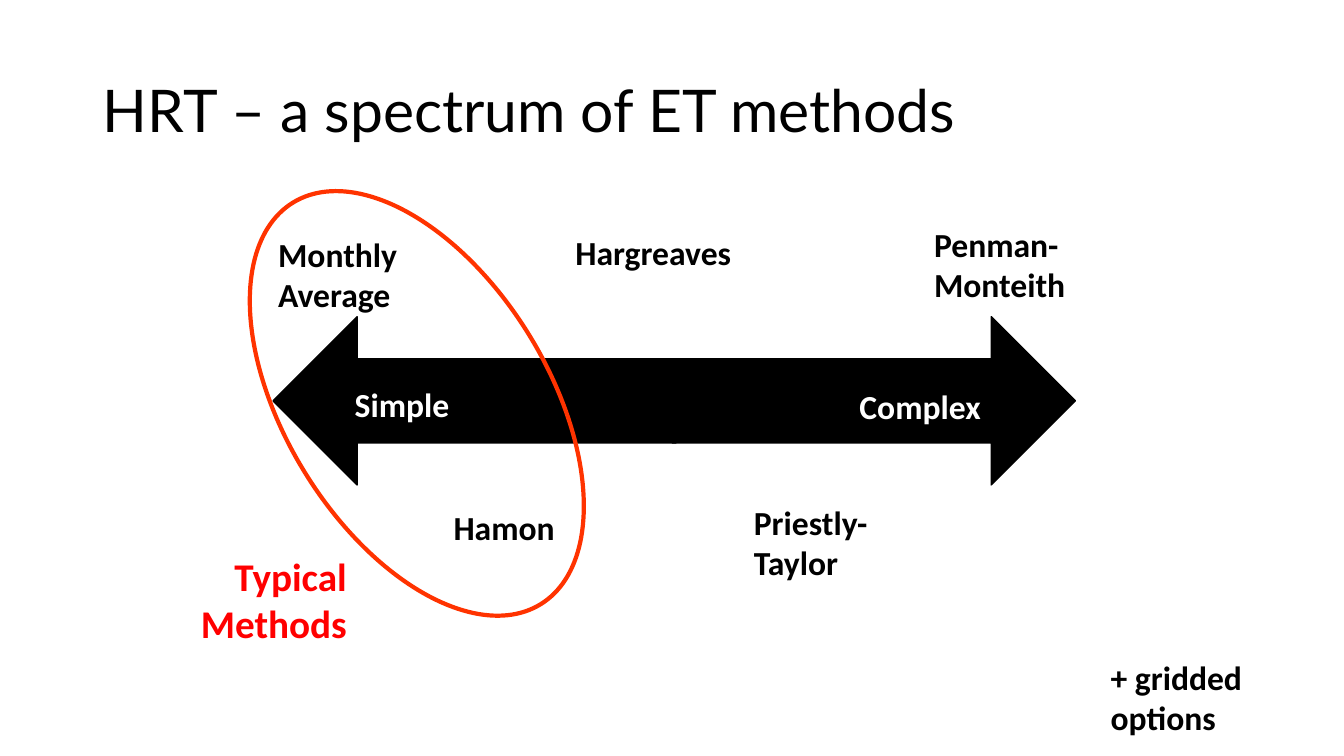
from dataclasses import dataclass

from lxml.etree import SubElement
from pptx import Presentation
from pptx.dml.color import RGBColor as Color
from pptx.enum.shapes import MSO_SHAPE as Shape
from pptx.enum.text import MSO_ANCHOR as Anchor, MSO_AUTO_SIZE as AutoSize, PP_ALIGN as Align
from pptx.oxml.ns import qn
from pptx.util import Cm, Pt


@dataclass(frozen=True)
class Theme:
    black: Color = Color(0, 0, 0)
    white: Color = Color(255, 255, 255)
    red: Color = Color(255, 0, 0)
    ring: Color = Color(255, 51, 0)
    title_font: str = "Lato"
    body_font: str = "Calibri"
    title_size: int = 42
    callout_size: int = 28
    label_size: int = 24


@dataclass(frozen=True)
class Box:
    left: float
    top: float
    width: float
    height: float

    def inner(self, left, top, width, height):
        return Box(self.left + left, self.top + top, width, height)

    def lengths(self):
        return [Cm(value) for value in (self.left, self.top, self.width, self.height)]


THEME = Theme()
TITLE_BOX = Box(2.34, 1.02, 29.21, 3.68)
SPECTRUM_BOX = Box(6.88, 7.98, 20.22, 4.24)
GRIDDED_BOX = Box(27.74, 16.43, 5.72, 2.31)
ARROW_WIDTH = 10.16
METHODS = [
    ("Monthly Average", (-0.12, -2.21, 5.28, 2.31)),
    ("Hamon", (4.3, 4.67, 3.68, 1.27)),
    ("Hargreaves", (7.37, -2.26, 4.47, 1.27)),
    ("Priestly-Taylor", (11.87, 4.54, 4.88, 2.31)),
    ("Penman-Monteith", (16.41, -2.47, 5.69, 2.31)),
]


def write(frame, text, font=THEME.body_font, size=THEME.label_size, color=THEME.black,
          bold=True, align=Align.LEFT, anchor=Anchor.TOP, spacing=None):
    frame.word_wrap = True
    frame.auto_size = AutoSize.NONE
    frame.vertical_anchor = anchor
    para = frame.paragraphs[0]
    para.alignment = align
    para.line_spacing = spacing
    span = para.add_run()
    span.text = text
    span.font.name = font
    span.font.size = Pt(size)
    span.font.bold = bold
    span.font.color.rgb = color


def add_label(page, box, text, **text_format):
    label = page.shapes.add_textbox(*box.lengths())
    write(label.text_frame, text, **text_format)
    return label


def add_shape(page, kind, box, line, line_width, fill=None, rotation=0):
    shape = page.shapes.add_shape(kind, *box.lengths())
    shape.shadow.inherit = False
    shape.rotation = rotation
    shape.line.color.rgb = line
    shape.line.width = Pt(line_width)
    if fill is None:
        shape.fill.background()
    else:
        shape.fill.solid()
        shape.fill.fore_color.rgb = fill


def place_title(page, box):
    title = page.shapes.title
    title.left, title.top, title.width, title.height = box.lengths()
    write(title.text_frame, "HRT – a spectrum of ET methods", font=THEME.title_font,
          size=THEME.title_size, bold=False, anchor=Anchor.MIDDLE, spacing=0.9)


def draw_methods(page, box):
    for name, place in METHODS:
        add_label(page, box.inner(*place), name)


def draw_spectrum(page, box):
    ends = [
        ("Complex", box.width - ARROW_WIDTH, 0, (14.53, 1.62, 3.99, 1.27)),
        ("Simple", 0, 180, (1.81, 1.57, 3.07, 1.27)),
    ]
    for name, offset, rotation, place in ends:
        add_shape(page, Shape.RIGHT_ARROW, box.inner(offset, 0, ARROW_WIDTH, box.height),
                  THEME.black, 1, fill=THEME.black, rotation=rotation)
        add_label(page, box.inner(*place), name, color=THEME.white)


def draw_typical_methods(page, box):
    add_shape(page, Shape.OVAL, box.inner(0.31, -3.76, 6.63, 11.89), THEME.ring, 3, rotation=328.3)
    callout = add_label(page, box.inner(-2.77, 5.81, 4.88, 2.64), "Typical Methods",
                        size=THEME.callout_size, color=THEME.red, align=Align.RIGHT)
    callout.fill.solid()
    callout.fill.fore_color.rgb = THEME.white
    tint = callout.element.spPr.find(qn("a:solidFill"))[0]
    SubElement(tint, qn("a:alpha"), val="50000")


def main():
    deck = Presentation()
    deck.slide_width, deck.slide_height = Cm(33.87), Cm(19.05)
    page = deck.slides.add_slide(deck.slide_layouts[5])
    place_title(page, TITLE_BOX)
    draw_methods(page, SPECTRUM_BOX)
    draw_spectrum(page, SPECTRUM_BOX)
    draw_typical_methods(page, SPECTRUM_BOX)
    add_label(page, GRIDDED_BOX, "+ gridded options")
    deck.save("out.pptx")


if __name__ == "__main__":
    main()
